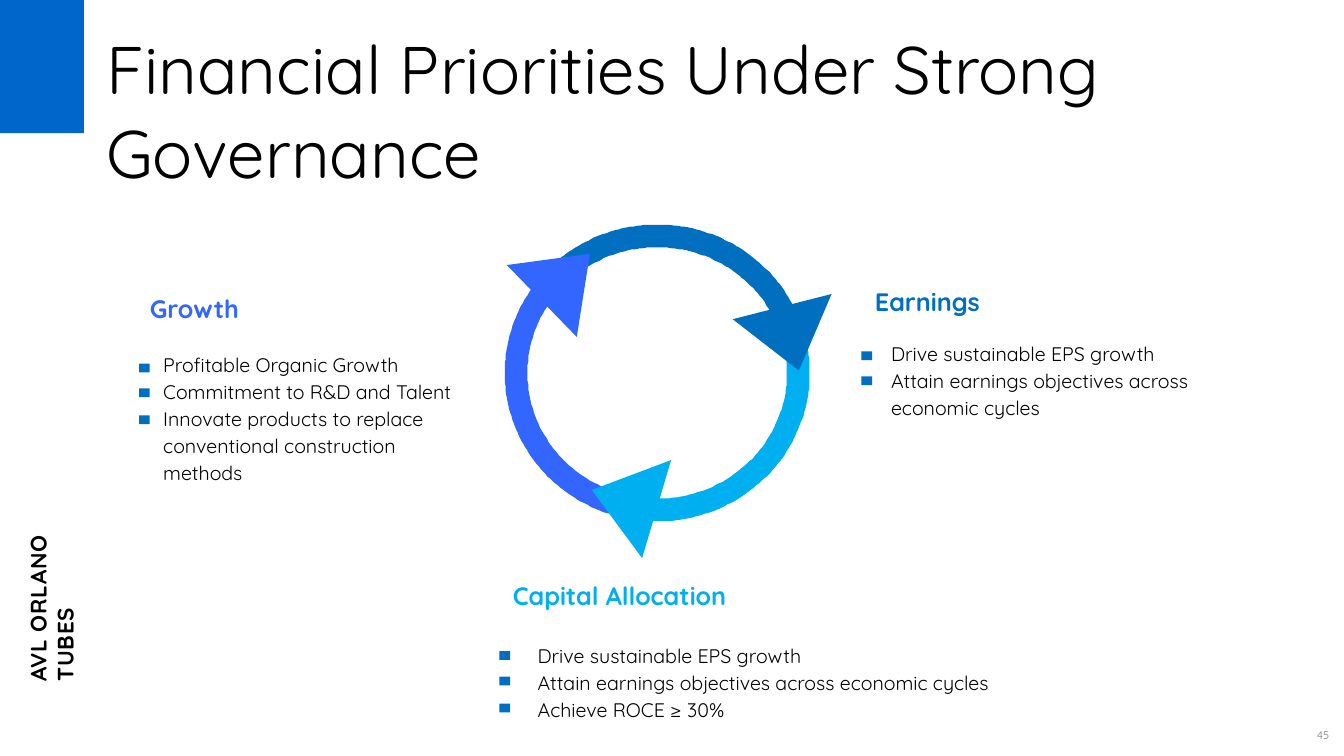
"""Builds the financial priorities slide with its three-arrow cycle."""
from math import cos, radians, sin

from lxml.etree import SubElement
from pptx import Presentation
from pptx.dml.color import RGBColor
from pptx.enum.shapes import MSO_SHAPE
from pptx.oxml.ns import qn
from pptx.util import Pt

BLUE, SKY, INDIGO = "006FC0", "00AFEF", "3366FF"


def color(value):
    return RGBColor.from_string(value)


def add_text(text, left, top, width, height, size=21, fill="000000", bold=False,
             inset=0.7, indent=0, spacing=None, before=0, vertical=False, tracking=0):
    box = page.shapes.add_textbox(Pt(left), Pt(top), Pt(width), Pt(height))
    frame = box.text_frame
    frame.word_wrap = True
    frame.margin_left = frame.margin_right = frame.margin_bottom = 0
    frame.margin_top = Pt(inset)
    if vertical:
        frame._txBody.bodyPr.set("vert", "vert270")
    for index, line in enumerate(text.split("\n")):
        para = frame.paragraphs[0] if index == 0 else frame.add_paragraph()
        para._p.get_or_add_pPr().set("marL", str(Pt(indent)))
        para.line_spacing = spacing
        para.space_before = Pt(before if index else 0)
        para.text = line
        for span in para.runs:
            span.font.name = "Quicksand"
            span.font.size = Pt(size)
            span.font.bold = bold
            span.font.color.rgb = color(fill)
            if tracking:
                span.font._element.set("spc", str(int(tracking * 100)))


deck = Presentation()
deck.slide_width, deck.slide_height = Pt(1440), Pt(810)
page = deck.slides.add_slide(deck.slide_layouts[6])

add_text("Financial Priorities Under Strong Governance", 113.8, 18, 1200, 188,
         size=72, inset=8, spacing=Pt(90))
add_text("AVL ORLANO\vTUBES", 26, 500, 32, 230, size=24, bold=True, inset=1.4,
         vertical=True, tracking=0.8)

for title, left, top, width, fill in [
    ("Growth", 160.6, 313.2, 140, INDIGO),
    ("Earnings", 937.4, 306, 200, BLUE),
    ("Capital Allocation", 549.4, 620.6, 400, SKY),
]:
    add_text(title, left, top, width, 34.6, size=27, fill=fill, bold=True)

add_text("Profitable Organic Growth\nCommitment to R&D and Talent\n"
         "Innovate products to replace conventional construction methods",
         174.2, 373.7, 328, 147, indent=0.7, spacing=1.15)
add_text("Drive sustainable EPS growth\nAttain earnings objectives across economic cycles",
         936.7, 361.7, 353, 88, indent=18, spacing=1.15)
add_text("Drive sustainable EPS growth\nAttain earnings objectives across economic cycles\n"
         "Achieve ROCE ≥ 30%", 548.6, 689, 544, 84, indent=27.4, before=3.8)
add_text("45", 1411, 765.4, 27, 29, size=12, fill="7E7E7E", inset=14.4)

center_x, center_y, radius_x, radius_y = 704.2, 399.6, 151.2, 146.9
cycle = [
    ("arc", BLUE, (220, 338)),
    ("arc", INDIGO, (98, 221)),
    ("head", INDIGO, [(632.2, 272.2), (542.9, 284.4), (618.5, 361.4)]),
    ("arc", SKY, (337, 458)),
    ("head", SKY, [(718.6, 493.2), (634.3, 524.9), (688.3, 597.6)]),
    ("head", BLUE, [(891.4, 314.6), (784.8, 342), (856.1, 397.4)]),
]
for kind, fill, data in cycle:
    points = data
    if kind == "arc":
        points = [(center_x + radius_x * cos(radians(angle)),
                   center_y + radius_y * sin(radians(angle)))
                  for angle in range(data[0], data[1] + 1)]
    builder = page.shapes.build_freeform(*points[0], scale=Pt(1))
    builder.add_line_segments(points[1:], close=kind == "head")
    shape = builder.convert_to_shape()
    shape.shadow.inherit = False
    if kind == "head":
        shape.fill.solid()
        shape.fill.fore_color.rgb = color(fill)
        shape.line.fill.background()
    else:
        shape.fill.background()
        shape.line.color.rgb = color(fill)
        shape.line.width = Pt(24.25)
        SubElement(shape.line._ln, qn("a:round"))

blocks = [(0, 0, 90, 142.6, "0066CC")]
for left, tops in [(149, (389.5, 416.2, 445)), (923, (376.6, 403.2)),
                   (535, (697.7, 725, 753.8))]:
    blocks += [(left, top, 11.5, 9.4, BLUE) for top in tops]
for left, top, width, height, fill in blocks:
    block = page.shapes.add_shape(MSO_SHAPE.RECTANGLE, Pt(left), Pt(top), Pt(width), Pt(height))
    block.shadow.inherit = False
    block.fill.solid()
    block.fill.fore_color.rgb = color(fill)
    block.line.fill.background()

deck.save("out.pptx")
